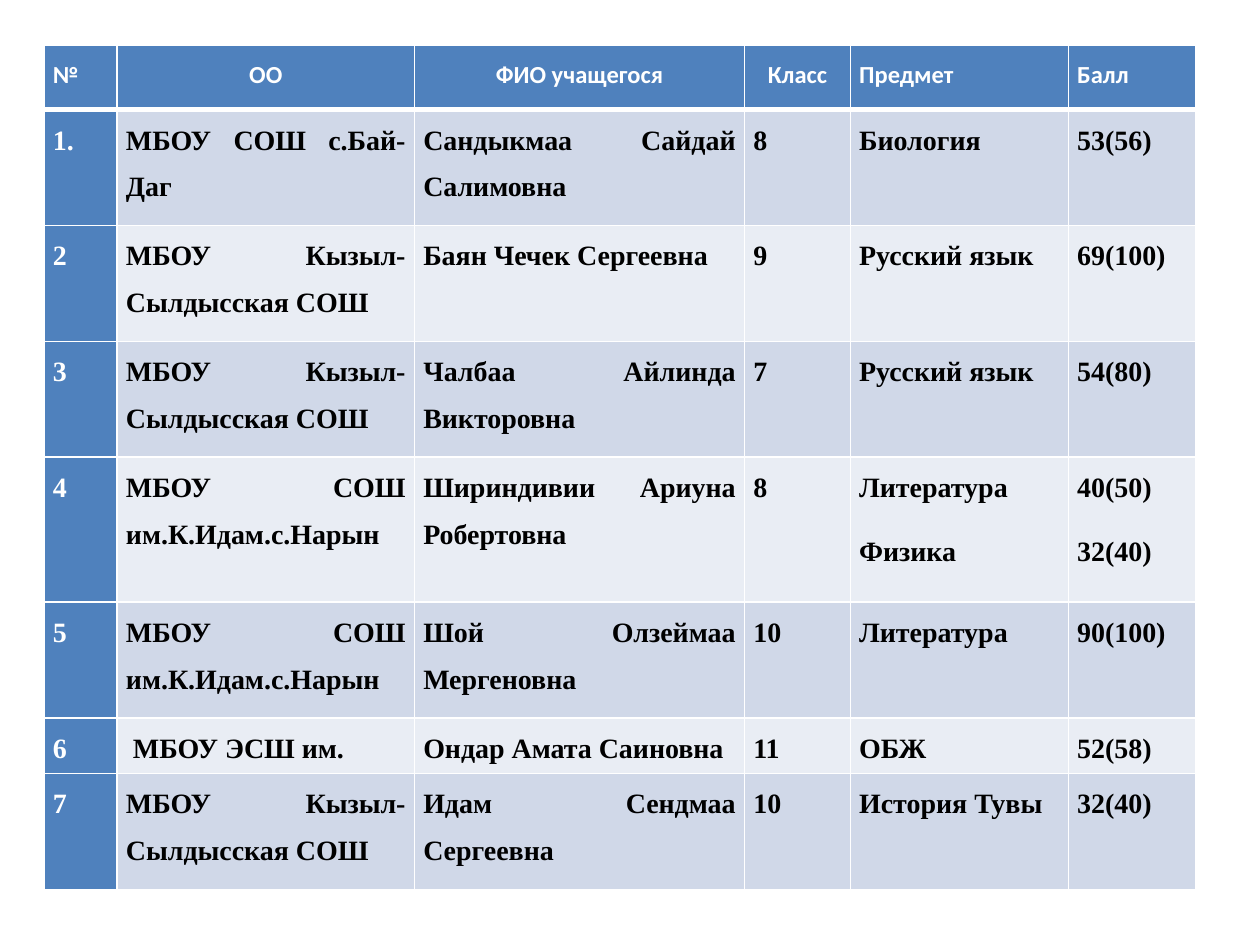
from lxml.etree import SubElement
from pptx import Presentation
from pptx.dml.color import RGBColor
from pptx.enum.text import PP_ALIGN
from pptx.oxml.ns import qn
from pptx.util import Inches, Pt

COLORS = {
    "accent": "4F81BD",
    "odd": "D0D8E8",
    "even": "E9EDF4",
    "light": "FFFFFF",
    "dark": "000000",
}
COLUMN_WIDTHS = [0.58, 2.36, 2.62, 0.84, 1.73, 1.01]
ROW_HEIGHTS = [0.51, 0.92, 0.92, 0.92, 1.15, 0.92, 0.44, 0.92]
RESULTS = [
    ["№", "ОО", "ФИО учащегося", "Класс", "Предмет", "Балл"],
    ["1.", "МБОУ СОШ с.Бай-Даг", "Сандыкмаа Сайдай Салимовна", "8", "Биология", "53(56)"],
    ["2", "МБОУ Кызыл-Сылдысская СОШ", "Баян Чечек Сергеевна", "9", "Русский язык", "69(100)"],
    ["3", "МБОУ Кызыл-Сылдысская СОШ", "Чалбаа Айлинда Викторовна", "7", "Русский язык", "54(80)"],
    ["4", "МБОУ СОШ им.К.Идам.с.Нарын", "Шириндивии Ариуна Робертовна", "8", "Литература\nФизика", "40(50)\n32(40)"],
    ["5", "МБОУ СОШ им.К.Идам.с.Нарын", "Шой Олзеймаа Мергеновна", "10", "Литература", "90(100)"],
    ["6", " МБОУ ЭСШ им.", "Ондар Амата Саиновна", "11", "ОБЖ", "52(58)"],
    ["7", "МБОУ Кызыл-Сылдысская СОШ", "Идам Сендмаа Сергеевна", "10", "История Тувы", "32(40)"],
]


def add_border(cell, side, width):
    line = SubElement(cell._tc.get_or_add_tcPr(), qn(f"a:ln{side}"), w=str(Pt(width)))
    fill = SubElement(line, qn("a:solidFill"))
    SubElement(fill, qn("a:srgbClr"), val=COLORS["light"])


presentation = Presentation()
presentation.slide_width = Inches(10)
presentation.slide_height = Inches(7.5)
slide = presentation.slides.add_slide(presentation.slide_layouts[6])

results = slide.shapes.add_table(
    len(RESULTS), len(COLUMN_WIDTHS), Inches(0.35), Inches(0.36),
    Inches(sum(COLUMN_WIDTHS)), Inches(sum(ROW_HEIGHTS)),
).table
results.first_col = True
for column, width in zip(results.columns, COLUMN_WIDTHS):
    column.width = Inches(width)
for row, height in zip(results.rows, ROW_HEIGHTS):
    row.height = Inches(height)

for r, record in enumerate(RESULTS):
    for c, value in enumerate(record):
        cell = results.cell(r, c)
        header = r == 0
        heading = header or c == 0
        cell.margin_left = cell.margin_right = Inches(0.07)
        cell.margin_top = cell.margin_bottom = 0
        for side in "LRTB":
            under_header = (r, side) in [(0, "B"), (1, "T")]
            add_border(cell, side, 3 if under_header else 1)
        cell.fill.solid()
        band = "accent" if heading else "odd" if r % 2 else "even"
        cell.fill.fore_color.rgb = RGBColor.from_string(COLORS[band])
        cell.text = value
        for paragraph in cell.text_frame.paragraphs:
            centered = header and c in (1, 2, 3)
            paragraph.alignment = PP_ALIGN.CENTER if centered else PP_ALIGN.JUSTIFY
            paragraph.line_spacing = 1.5
            paragraph.space_after = Pt(10)
            paragraph.font.name = "Calibri" if header else "Times New Roman"
            paragraph.font.size = Pt(14 if header else 16)
            paragraph.font.bold = True
            ink = "light" if heading else "dark"
            paragraph.font.color.rgb = RGBColor.from_string(COLORS[ink])

presentation.save("out.pptx")
